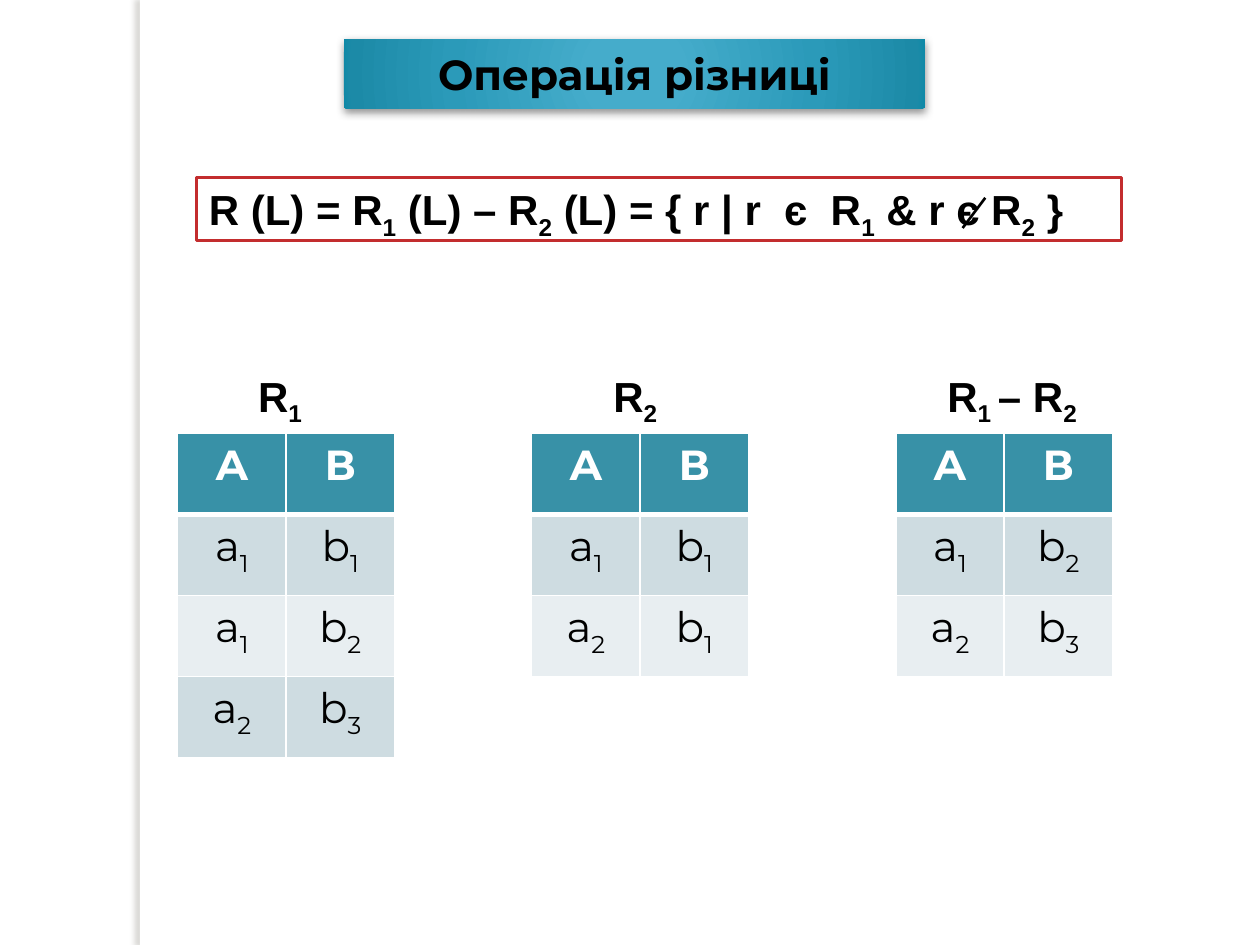
from dataclasses import dataclass

from lxml.etree import SubElement
from pptx import Presentation
from pptx.dml.color import RGBColor
from pptx.enum.shapes import MSO_CONNECTOR, MSO_SHAPE
from pptx.enum.text import MSO_ANCHOR, MSO_AUTO_SIZE, PP_ALIGN
from pptx.oxml import parse_xml
from pptx.oxml.ns import nsdecls, qn
from pptx.shapes.autoshape import Shape
from pptx.slide import Slide
from pptx.table import _Cell
from pptx.text.text import _Paragraph
from pptx.util import Inches, Pt

BLACK = RGBColor(0x00, 0x00, 0x00)
WHITE = RGBColor(0xFF, 0xFF, 0xFF)
RED = RGBColor(0xC3, 0x2D, 0x2E)
TEAL = RGBColor(0x38, 0x91, 0xA7)
BANDS = (RGBColor(0xCE, 0xDC, 0xE1), RGBColor(0xE8, 0xEE, 0xF1))
STRIP_SHADOW = RGBColor(0x73, 0x6F, 0x63)
TITLE_GRADIENT = (
    (0, RGBColor(0x45, 0xAC, 0xCC)),
    (15, RGBColor(0x45, 0xAC, 0xCB)),
    (62, RGBColor(0x2B, 0x9A, 0xB9)),
    (97, RGBColor(0x1C, 0x8A, 0xA7)),
    (100, RGBColor(0x0E, 0x89, 0xA7)),
)

HEADING = {"name": "Montserrat", "size": Pt(24), "bold": True}
BODY = {**HEADING, "bold": False}
FORMULA = {**HEADING, "name": "Arial"}

TABLE_TOP = 3.44
COLUMN_WIDTH = Inches(0.86)
ROW_HEIGHT = Inches(1.93 / 3)


@dataclass(frozen=True)
class Relation:
    name: str
    name_left: float
    name_width: float
    table_left: float
    rows: tuple[tuple[str, str], ...]


# Text between two tildes is a subscript.
RELATIONS = (
    Relation("R~1~", 1.95, 0.57, 1.41,
             (("a~1~", "b~1~"), ("a~1~", "b~2~"), ("a~2~", "b~3~"))),
    Relation("R~2~", 4.77, 0.57, 4.22,
             (("a~1~", "b~1~"), ("a~2~", "b~1~"))),
    Relation("R~1 ~– R~2~", 7.42, 1.4, 7.11,
             (("a~1~", "b~2~"), ("a~2~", "b~3~"))),
)


def write(para: _Paragraph, text: str, style: dict, color: RGBColor) -> None:
    """Fill the paragraph, lowering each part that stands between tildes."""
    for index, part in enumerate(text.split("~")):
        if not part:
            continue
        span = para.add_run()
        span.text = part
        for name, value in style.items():
            setattr(span.font, name, value)
        span.font.color.rgb = color
        if index % 2:
            span.font._element.set("baseline", "-25000")


def add_rectangle(slide: Slide, left: float, top: float, width: float, height: float) -> Shape:
    box = slide.shapes.add_shape(
        MSO_SHAPE.RECTANGLE, Inches(left), Inches(top), Inches(width), Inches(height))
    box.shadow.inherit = False
    box.fill.solid()
    box.fill.fore_color.rgb = WHITE
    box.line.fill.background()
    return box


def add_shadow(box: Shape, color: RGBColor, opacity: int, blur: float,
               distance: float, angle: int) -> None:
    effects = box._element.spPr.find(qn("a:effectLst"))
    shadow = SubElement(effects, qn("a:outerShdw"), blurRad=str(Pt(blur)),
                        dist=str(Pt(distance)), dir=str(angle * 60000), rotWithShape="0")
    tone = SubElement(shadow, qn("a:srgbClr"), val=str(color))
    SubElement(tone, qn("a:alpha"), val=str(opacity * 1000))


def fill_radially(box: Shape, stops: tuple[tuple[int, RGBColor], ...]) -> None:
    stop_xml = "".join(
        f'<a:gs pos="{position * 1000}"><a:srgbClr val="{color}"/></a:gs>'
        for position, color in stops)
    gradient = parse_xml(
        f'<a:gradFill {nsdecls("a")} rotWithShape="1"><a:gsLst>{stop_xml}</a:gsLst>'
        '<a:path path="circle"><a:fillToRect l="50000" t="50000" r="50000" b="50000"/>'
        '</a:path></a:gradFill>')
    properties = box._element.spPr
    properties.replace(properties.find(qn("a:solidFill")), gradient)


def set_borders(cell: _Cell, top: float, bottom: float) -> None:
    widths = {"lnL": 1, "lnR": 1, "lnT": top, "lnB": bottom}
    for index, (side, width) in enumerate(widths.items()):
        border = parse_xml(
            f'<a:{side} {nsdecls("a")} w="{Pt(width)}"><a:solidFill>'
            f'<a:srgbClr val="{WHITE}"/></a:solidFill></a:{side}>')
        cell._tc.get_or_add_tcPr().insert(index, border)


def add_title(slide: Slide) -> None:
    box = add_rectangle(slide, 2.73, 0.31, 4.61, 0.55)
    fill_radially(box, TITLE_GRADIENT)
    add_shadow(box, BLACK, 43, 5, 2, 90)
    box.text_frame.vertical_anchor = MSO_ANCHOR.MIDDLE
    para = box.text_frame.paragraphs[0]
    para.alignment = PP_ALIGN.CENTER
    write(para, "Операція різниці", HEADING, BLACK)


def add_formula(slide: Slide) -> None:
    box = add_rectangle(slide, 1.56, 1.41, 7.34, 0.5)
    box.line.color.rgb = RED
    box.line.width = Pt(2)
    box.text_frame.word_wrap = True
    box.text_frame.vertical_anchor = MSO_ANCHOR.TOP
    para = box.text_frame.paragraphs[0]
    para.alignment = PP_ALIGN.LEFT
    write(para, "R (L) = R~1~ (L) – R~2~ (L) = { r | r  є  R~1~ & r є R~2~ }", FORMULA, BLACK)


def add_negation_stroke(slide: Slide) -> None:
    stroke = slide.shapes.add_connector(
        MSO_CONNECTOR.STRAIGHT, Inches(7.82), Inches(1.57), Inches(7.64), Inches(1.81))
    stroke.line.color.rgb = BLACK
    stroke.line.width = Pt(1.5)
    SubElement(stroke._element.spPr, qn("a:effectLst"))


def add_relation(slide: Slide, relation: Relation) -> None:
    label = slide.shapes.add_textbox(
        Inches(relation.name_left), Inches(2.89), Inches(relation.name_width), Inches(0.5))
    label.text_frame.word_wrap = False
    label.text_frame.auto_size = MSO_AUTO_SIZE.SHAPE_TO_FIT_TEXT
    write(label.text_frame.paragraphs[0], relation.name, FORMULA, BLACK)

    rows = (("А", "В"), *relation.rows)
    table = slide.shapes.add_table(
        len(rows), 2, Inches(relation.table_left), Inches(TABLE_TOP),
        COLUMN_WIDTH * 2, ROW_HEIGHT * len(rows)).table
    for column in table.columns:
        column.width = COLUMN_WIDTH
    for row_index, texts in enumerate(rows):
        table.rows[row_index].height = ROW_HEIGHT
        is_header = row_index == 0
        for column_index, text in enumerate(texts):
            cell = table.cell(row_index, column_index)
            cell.fill.solid()
            cell.fill.fore_color.rgb = TEAL if is_header else BANDS[(row_index - 1) % 2]
            set_borders(cell, top=3 if row_index == 1 else 1, bottom=3 if is_header else 1)
            para = cell.text_frame.paragraphs[0]
            para.alignment = PP_ALIGN.CENTER
            write(para, text, HEADING if is_header else BODY, WHITE if is_header else BLACK)


def main() -> None:
    deck = Presentation()
    deck.slide_width, deck.slide_height = Inches(10), Inches(7.5)
    slide = deck.slides.add_slide(deck.slide_layouts[6])
    side_strip = add_rectangle(slide, 1.11, 0, 0.08, 7.5)
    add_shadow(side_strip, STRIP_SHADOW, 25, 3, 3, 180)
    add_title(slide)
    add_formula(slide)
    for relation in RELATIONS:
        add_relation(slide, relation)
    add_negation_stroke(slide)
    deck.save("out.pptx")


if __name__ == "__main__":
    main()
